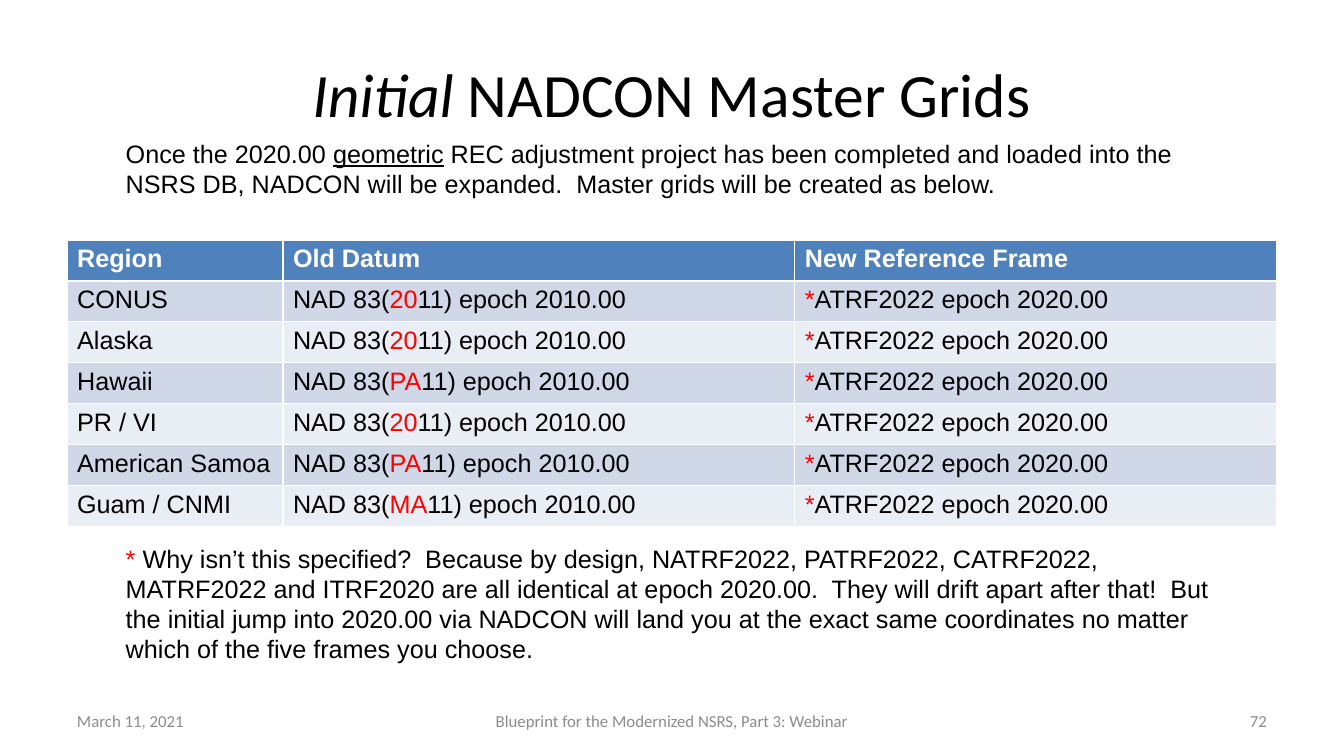
"""Build the slide on the initial NADCON master grids."""
from dataclasses import dataclass
from typing import Sequence

from pptx import Presentation
from pptx import util as u
from pptx.dml.color import RGBColor
from pptx.enum import text


@dataclass(frozen=True)
class Theme:
    """Colours, fonts and type sizes of the slide."""
    ink: str = "000000"
    accent: str = "FF0000"
    muted: str = "8C8C8C"
    white: str = "FFFFFF"
    header: str = "4F81BD"
    bands: tuple[str, str] = ("D0D8E8", "E9EDF4")
    heading_font: str = "Calibri"
    body_font: str = "Arial"
    title_size: int = 44
    body_size: int = 18
    footer_size: int = 12


@dataclass(frozen=True)
class Run:
    """A stretch of text with its own emphasis."""
    words: str
    color: str | None = None
    italic: bool = False
    underline: bool = False


@dataclass(frozen=True)
class TextBox:
    """A text box with its place in centimetres."""
    runs: Sequence[Run]
    left: float
    top: float
    width: float
    height: float


@dataclass(frozen=True)
class Region:
    """A region and the letters that mark its old datum."""
    name: str
    datum: str


THEME = Theme()
ALIGN = text.PP_ALIGN
MARGIN = 1.69
TABLE_TOP = 6.05
ROW_HEIGHT = 1.03
COLUMN_WIDTHS = (5.44, 12.9, 12.13)
HEADINGS = ("Region", "Old Datum", "New Reference Frame")
REGIONS = (
    Region("CONUS", "20"),
    Region("Alaska", "20"),
    Region("Hawaii", "PA"),
    Region("PR / VI", "20"),
    Region("American Samoa", "PA"),
    Region("Guam / CNMI", "MA"),
)
TITLE = (Run("Initial", italic=True), Run(" NADCON Master Grids"))
BODY_BOXES = (
    TextBox((Run("Once the 2020.00 "), Run("geometric", underline=True),
             Run(" REC adjustment project has been completed and loaded into the NSRS DB, "
                 "NADCON will be expanded.  Master grids will be created as below.")),
            2.92, 3.35, 28, 1.8),
    TextBox((Run("* ", color=THEME.accent),
             Run("Why isn’t this specified?  Because by design, NATRF2022, PATRF2022, CATRF2022, "
                 "MATRF2022 and ITRF2020 are all identical at epoch 2020.00.  They will drift apart "
                 "after that!  But the initial jump into 2020.00 via NADCON will land you at the "
                 "exact same coordinates no matter which of the five frames you choose.")),
            2.92, 13.56, 28, 3.33),
)
FOOTERS = (
    (TextBox((Run("March 11, 2021"),), MARGIN, 17.65, 7.9, 1.01), ALIGN.LEFT),
    (TextBox((Run("Blueprint for the Modernized NSRS, Part 3: Webinar"),), 11.57, 17.65, 10.73, 1.01),
     ALIGN.CENTER),
    (TextBox((Run("72"),), 24.28, 17.65, 7.9, 1.01), ALIGN.RIGHT),
)


def write_text(frame, runs: Sequence[Run], *, size: int = THEME.body_size,
               font: str = THEME.body_font, color: str = THEME.ink, bold: bool = False,
               align=ALIGN.LEFT, anchor=text.MSO_ANCHOR.TOP) -> None:
    """Write the runs as one formatted paragraph."""
    frame.word_wrap = True
    frame.vertical_anchor = anchor
    paragraph = frame.paragraphs[0]
    paragraph.alignment = align
    for item in runs:
        run = paragraph.add_run()
        run.text = item.words
        run.font.name = font
        run.font.size = u.Pt(size)
        run.font.bold = bold
        run.font.italic = item.italic
        run.font.underline = item.underline
        run.font.color.rgb = RGBColor.from_string(item.color or color)


def add_text_box(slide, box: TextBox, **text_format) -> None:
    """Add a text box to the slide."""
    shape = slide.shapes.add_textbox(u.Cm(box.left), u.Cm(box.top), u.Cm(box.width), u.Cm(box.height))
    write_text(shape.text_frame, box.runs, **text_format)


def write_title(slide) -> None:
    """Place and format the title placeholder."""
    title = slide.shapes.title
    title.left, title.top = u.Cm(MARGIN), u.Cm(0.76)
    title.width, title.height = u.Cm(30.48), u.Cm(3.18)
    write_text(title.text_frame, TITLE, size=THEME.title_size, font=THEME.heading_font,
               align=ALIGN.CENTER, anchor=text.MSO_ANCHOR.MIDDLE)


def region_cells(region: Region) -> list[Sequence[Run]]:
    """Return the runs of each cell in a region's row."""
    return [
        (Run(region.name),),
        (Run("NAD 83("), Run(region.datum, color=THEME.accent), Run("11) epoch 2010.00")),
        (Run("*", color=THEME.accent), Run("ATRF2022 epoch 2020.00")),
    ]


def add_grid_table(slide) -> None:
    """Add the table of regions, old datums and new frames."""
    rows = [[(Run(heading),) for heading in HEADINGS], *map(region_cells, REGIONS)]
    table = slide.shapes.add_table(
        len(rows), len(HEADINGS), u.Cm(MARGIN), u.Cm(TABLE_TOP),
        u.Cm(sum(COLUMN_WIDTHS)), u.Cm(ROW_HEIGHT * len(rows))).table
    for column, width in zip(table.columns, COLUMN_WIDTHS):
        column.width = u.Cm(width)
    for row_index, row in enumerate(rows):
        table.rows[row_index].height = u.Cm(ROW_HEIGHT)
        is_header = row_index == 0
        fill = THEME.header if is_header else THEME.bands[(row_index - 1) % 2]
        for column_index, runs in enumerate(row):
            cell = table.cell(row_index, column_index)
            cell.fill.solid()
            cell.fill.fore_color.rgb = RGBColor.from_string(fill)
            write_text(cell.text_frame, runs, bold=is_header,
                       color=THEME.white if is_header else THEME.ink)


def main() -> None:
    """Build and save the presentation."""
    presentation = Presentation()
    presentation.slide_width, presentation.slide_height = u.Cm(33.87), u.Cm(19.05)
    slide = presentation.slides.add_slide(presentation.slide_layouts.get_by_name("Title Only"))
    write_title(slide)
    add_grid_table(slide)
    for box, align in FOOTERS:
        add_text_box(slide, box, size=THEME.footer_size, font=THEME.heading_font,
                     color=THEME.muted, align=align, anchor=text.MSO_ANCHOR.MIDDLE)
    for box in BODY_BOXES:
        add_text_box(slide, box)
    presentation.save("out.pptx")


if __name__ == "__main__":
    main()
